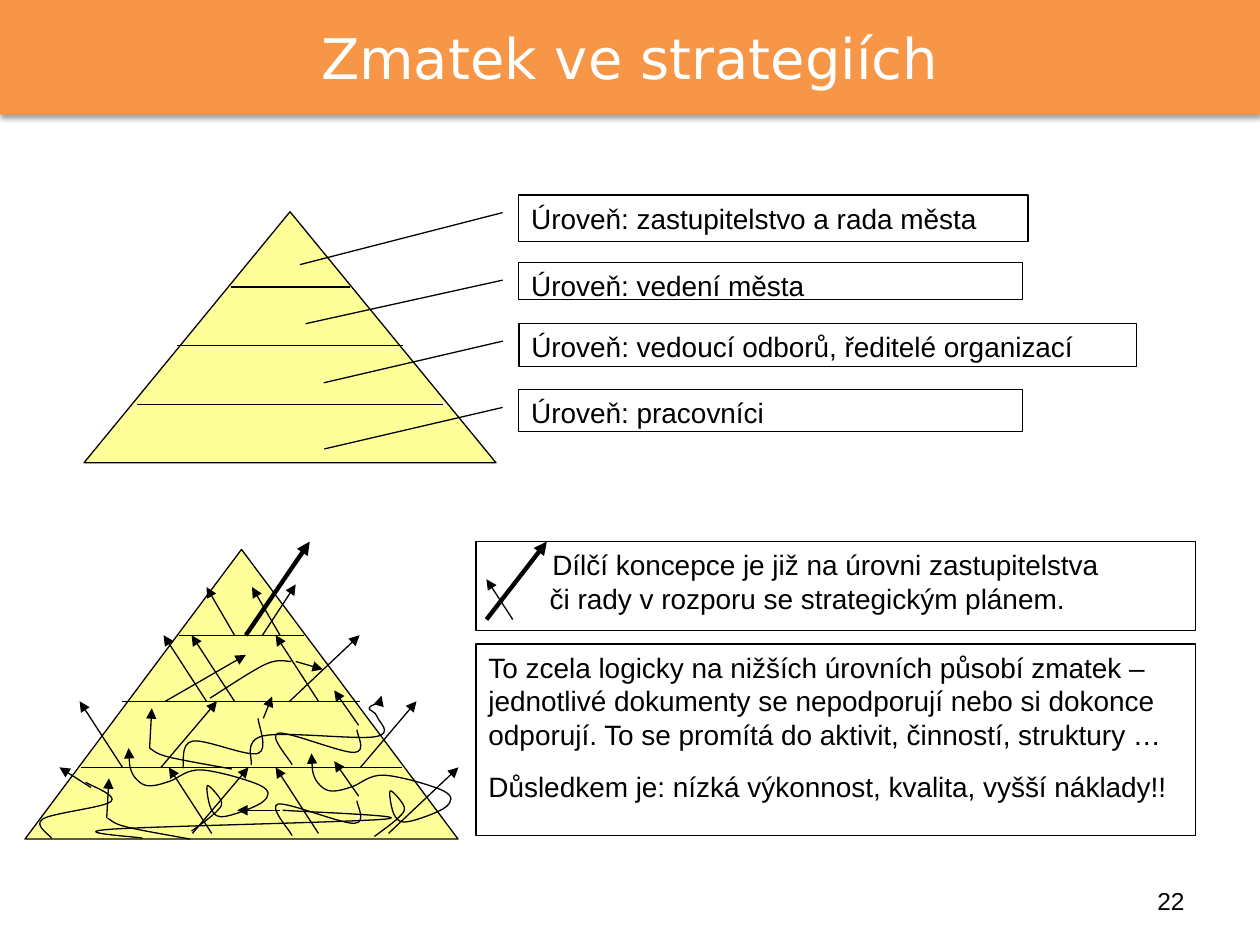
"""Build the slide on confusion in strategies: two pyramids with levels and notes."""
from lxml.etree import SubElement
from pptx import Presentation
from pptx.dml.color import RGBColor
from pptx.enum.shapes import MSO_CONNECTOR as CONN, MSO_SHAPE as SHP
from pptx.enum.text import MSO_ANCHOR as ANC, PP_ALIGN as AL
from pptx.oxml.ns import qn
from pptx.util import Pt

BLACK = RGBColor(0x00, 0x00, 0x00)
WHITE = RGBColor(0xFF, 0xFF, 0xFF)
YELLOW = RGBColor(0xFF, 0xFF, 0x99)
ORANGE = RGBColor(0xF7, 0x96, 0x46)
THIN, THICK = 0.75, 2.5


def draw(s, width=THIN, arrow=False, fill=None):
    if fill is not None:
        s.fill.solid()
        s.fill.fore_color.rgb = fill
    s.line.color.rgb = BLACK
    s.line.width = Pt(width)
    pr = s.element.spPr
    if arrow:
        SubElement(pr.find(qn("a:ln")), qn("a:tailEnd"), type="triangle")
    SubElement(pr, qn("a:effectLst"))


def write(s, lines, size=16, name="Arial", color=BLACK, align=AL.LEFT, anchor=ANC.TOP, gap=0):
    tf = s.text_frame
    for key, value in {"word_wrap": True, "vertical_anchor": anchor}.items():
        setattr(tf, key, value)
    for i, line in enumerate(lines):
        p = tf.paragraphs[0] if i == 0 else tf.add_paragraph()
        p.alignment = align
        if i:
            p.space_before = Pt(gap)
        r = p.add_run()
        r.text = line
        for key, value in {"size": Pt(size), "name": name}.items():
            setattr(r.font, key, value)
        r.font.color.rgb = color


prs = Presentation()
prs.slide_width, prs.slide_height = Pt(720), Pt(540)
slide = prs.slides.add_slide(prs.slide_layouts[6])

number = slide.shapes.add_textbox(Pt(516), Pt(500.5), Pt(168), Pt(28.5))
write(number, ["22"], size=14, align=AL.RIGHT, anchor=ANC.MIDDLE)

chaos = slide.shapes.add_group_shape().shapes
order = slide.shapes.add_group_shape().shapes

chaos_gap, order_gap = 37.75, 33.5
top, middle, low, floor = [363 + chaos_gap * i for i in range(4)]
pyramids = [
    (chaos, (14.25, 314, 247.5, 165.5), top, chaos_gap, (35.75, 68, 91.75)),
    (order, (48, 121, 235.5, 143.5), 164, order_gap, (34, 64.5, 87.5)),
]
for group, box, first_level, gap, half_widths in pyramids:
    draw(group.add_shape(SHP.ISOSCELES_TRIANGLE, *map(Pt, box)), fill=YELLOW)
    center = box[0] + box[2] / 2
    for i, half in enumerate(half_widths):
        y = Pt(first_level + gap * i)
        draw(group.add_connector(CONN.STRAIGHT, Pt(center - half), y, Pt(center + half), y))

climb = -chaos_gap
arrow_families = {
    "one level up, left": (THIN, (-24.5, climb), [
        (118, middle), (134, middle), (182, middle), (70, low), (121, floor), (182, floor)]),
    "one level up, right": (THIN, (32, climb), [(92, low), (206, low), (110, floor)]),
    "one level up, far right": (THIN, (40, climb), [(165.5, middle), (222, floor)]),
    "out of the peak, left": (THIN, (-16, -27.5), [(134, top), (160, top)]),
    "out of the peak, right": (THIN, (19, -29), [(150, top)]),
    "end of a hook": (THIN, (-14, -20), [(205, 414.5), (205, 455)]),
    "end of a bend": (THIN, (1.25, -22.75), [(85.5, 427.5), (61, 467.5)]),
    "end of the hump": (THIN, (15.5, 4.5), [(169, 378)]),
    "end of the loop": (THIN, (5, -12.5), [(150.5, 410.5)]),
    "end of the wave": (THIN, (-18, -11.5), [(52, 450)]),
    "end of the sweep": (THIN, (-24.5, 0), [(160, 463)]),
    "within a level": (THIN, (46, -26.5), [(94.5, middle)]),
    "partial concept": (THICK, (36.5, -53.5), [(140.5, top)]),
    "legend, concept": (THICK, (34.5, -44.5), [(278, 354)]),
    "legend, plan": (THIN, (-15, -23), [(293, 354)]),
}
for width, (dx, dy), starts in arrow_families.values():
    for x, y in starts:
        ends = map(Pt, (x, y, x + dx, y + dy))
        draw(chaos.add_connector(CONN.STRAIGHT, *ends), width, arrow=True)

scribbles = {
    "curl": (True, [(214, 478), (109.5, 475)], [
        (13.5, -10.5), (17, -17), (9, -26), (11.5, -12), (19.5, -8.5), (41, -17), (39.5, -26),
        (5.5, -35), (-12.5, -28.5), (-22.5, -26), (-29, -27.5), (-34.5, -34.5), (-36, -47.5)]),
    "step": (True, [(143.5, 437)], [
        (7, -16.5), (71, -16), (72, -27.5), (67.5, -32.5), (75.5, -36.5), (74.5, -39.5)]),
    "hump": (False, [(120, 399)], [(32, -19.5), (46.5, -21)]),
    "wave": (False, [(29.5, 479)], [(-5, -11), (34, -21), (19.5, -32)]),
    "sweep": (False, [(81.5, 479)], [(-19.5, -5), (139.5, -11), (80, -16)]),
    "hook": (False, [(204, 417), (204, 457.5)], [(-1.5, 13), (-45, 2), (-37, 20)]),
    "loop": (False, [(104.5, 439)], [(5.5, -15.5), (43, -8.5), (43, -28.5)]),
    "bend": (False, [(132.5, 439.5), (108.5, 479.5)], [(-36.5, -7), (-47, -12)]),
}
for arrow, starts, offsets in scribbles.values():
    for x, y in starts:
        knots = [(x, y)] + [(x + dx, y + dy) for dx, dy in offsets]
        padded = [knots[0], *knots, knots[-1]]
        tangents = [((c - a) / 6, (d - b) / 6)
                    for (a, b), (c, d) in zip(padded, padded[2:])]
        handles = []
        for (a, b), (c, d), (ta, tb), (tc, td) in zip(knots, knots[1:], tangents, tangents[1:]):
            handles += [(a + ta, b + tb), (c - tc, d - td), (c, d)]
        builder = chaos.build_freeform(Pt(x), Pt(y))
        builder.add_line_segments([(Pt(px), Pt(py)) for px, py in handles], close=False)
        s = builder.convert_to_shape()
        outline = s.element.spPr.find(".//" + qn("a:path"))
        segments = outline.findall(qn("a:lnTo"))
        for i in range(0, len(segments), 3):
            bezier = SubElement(outline, qn("a:cubicBezTo"))
            for segment in segments[i:i + 3]:
                bezier.append(segment[0])
                outline.remove(segment)
        s.fill.background()
        draw(s, arrow=arrow)

note_left, note_width = Pt(272), Pt(411)
conflict = chaos.add_shape(SHP.RECTANGLE, note_left, Pt(309.5), note_width, Pt(51))
conflict.fill.background()
draw(conflict)
write(conflict, ["Dílčí koncepce je již na úrovni zastupitelstva",
                 "či rady v rozporu se strategickým plánem."])
for p, indent in zip(conflict.text_frame.paragraphs, (36.5, 35)):
    p._p.get_or_add_pPr().set("marL", str(Pt(indent)))

result = chaos.add_shape(SHP.RECTANGLE, note_left, Pt(368), note_width, Pt(109.5))
draw(result, fill=WHITE)
write(result, ["To zcela logicky na nižších úrovních působí zmatek – jednotlivé dokumenty se "
               "nepodporují nebo si dokonce odporují. To se promítá do aktivit, činností, "
               "struktury …",
               "Důsledkem je: nízká výkonnost, kvalita, vyšší náklady!!"], gap=10.5)

callouts = [
    ("zastupitelstvo a rada města", 111.5, 291, 26.5, (0.378, -0.032, 1.5, -0.43)),
    ("vedení města", 150, 288, 21, (0.48, -0.032, 1.664, -0.423)),
    ("pracovníci", 222.5, 288, 24, (0.43, -0.032, 1.418, -0.386)),
    ("vedoucí odborů, ředitelé organizací", 185, 353, 24.5, (0.407, -0.026, 1.38, -0.316)),
]
for level, y, width, height, pointer in callouts:
    s = order.add_shape(SHP.LINE_CALLOUT_1, Pt(296.5), Pt(y), Pt(width), Pt(height))
    for i, value in enumerate(pointer):
        s.adjustments[i] = value
    draw(s, fill=WHITE)
    write(s, ["Úroveň: " + level])

title = slide.shapes.add_shape(SHP.RECTANGLE, Pt(0), Pt(0), Pt(720), Pt(65.5))
title.fill.solid()
title.fill.fore_color.rgb = ORANGE
title.line.fill.background()
title.shadow.inherit = False
shadow = SubElement(title.element.spPr.find(qn("a:effectLst")), qn("a:outerShdw"),
                    blurRad=str(Pt(3.1)), dist=str(Pt(1.6)), dir="5400000", rotWithShape="0")
tint = SubElement(shadow, qn("a:srgbClr"), val=str(BLACK))
SubElement(tint, qn("a:alpha"), val="38000")
write(title, ["Zmatek ve strategiích"], 32, "DejaVu Sans", WHITE, AL.CENTER, ANC.MIDDLE)

prs.save("out.pptx")
